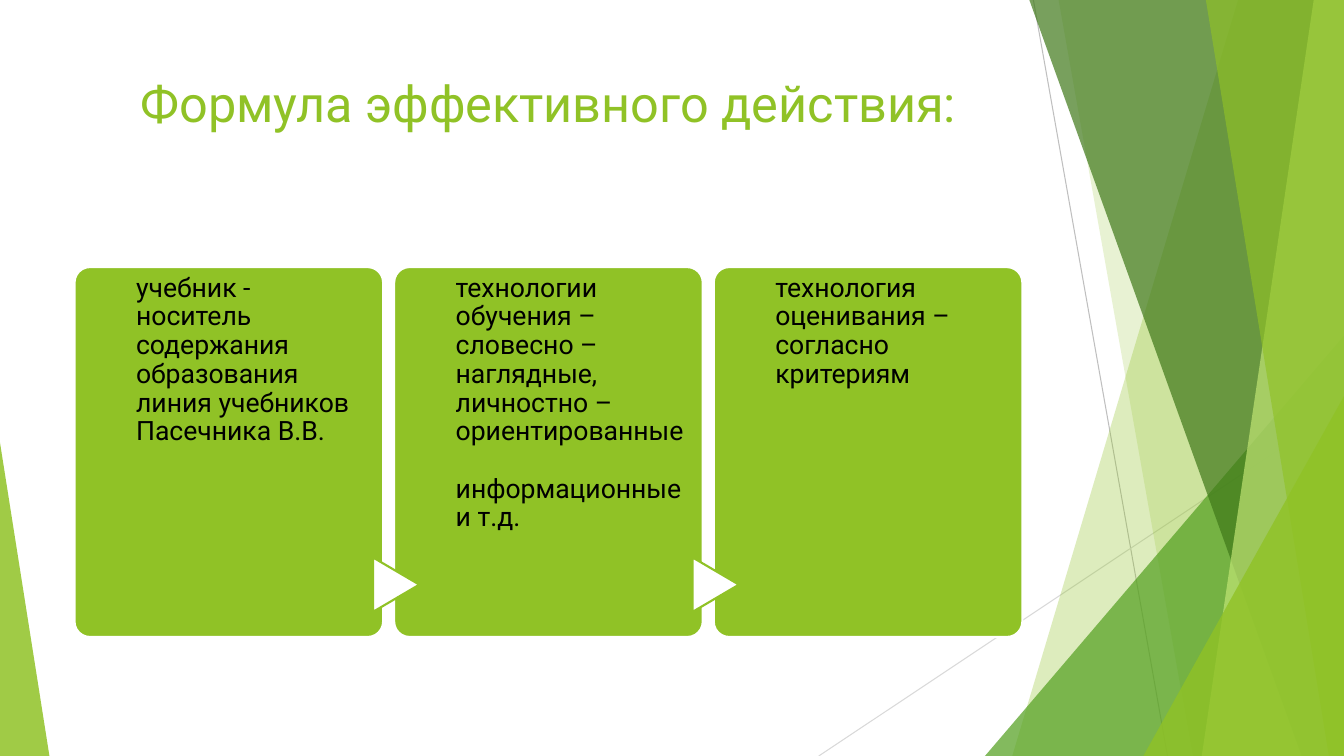
"""Build a slide with three linked cards beside a fan of green bands."""
from typing import NamedTuple

from lxml import etree
from pptx import Presentation
from pptx.dml.color import RGBColor
from pptx.enum.shapes import MSO_CONNECTOR, MSO_SHAPE
from pptx.enum.text import MSO_ANCHOR, PP_ALIGN
from pptx.oxml.ns import qn
from pptx.util import Inches, Pt

STRAIGHT = MSO_CONNECTOR.STRAIGHT
PEAK = MSO_SHAPE.ISOSCELES_TRIANGLE
ROUND = MSO_SHAPE.ROUNDED_RECTANGLE
ARROW = MSO_SHAPE.FLOWCHART_EXTRACT
TOP = MSO_ANCHOR.TOP
LEFT, CENTER = PP_ALIGN.LEFT, PP_ALIGN.CENTER
WIDE, HIGH = Inches(13.33), Inches(7.5)
GREEN, WHITE, BLACK = "90C226", "FFFFFF", "000000"


class Box(NamedTuple):
    """Hold a frame in percent of the slide."""
    left: float
    top: float
    wide: float
    high: float


class Ray(NamedTuple):
    """Hold a thin line in percent of the slide."""
    start: tuple[float, float]
    end: tuple[float, float]
    hue: str


class Band(NamedTuple):
    """Hold a band that runs to the right edge of the slide."""
    top: float
    foot: float
    hue: str
    alpha: int


class Wedge(NamedTuple):
    """Hold a right-angled triangle with its peak at one side."""
    box: Box
    peak: float
    hue: str
    alpha: int


RAYS = [
    Ray((76.89, 0), (86.87, 100), "BFBFBF"),
    Ray((100, 53.73), (60.92, 100), "D9D9D9"),
]
DECOR = [
    Band(92.12, 75.32, GREEN, 30),
    Band(78.77, 88.75, GREEN, 20),
    Wedge(Box(73.29, 44.4, 26.71, 55.6), 1, "54A021", 72),
    Band(76.59, 96.85, "3F7819", 70),
    Band(97.75, 89.42, "C0E474", 70),
    Band(89.72, 98.87, GREEN, 65),
    Wedge(Box(85.07, 52.4, 14.93, 47.6), 1, GREEN, 80),
    Wedge(Box(0, 58.53, 3.68, 41.47), 0, GREEN, 85),
]
TITLE = Box(5.55, 8.93, 70.52, 19.2)
CARD = Box(5.55, 35.33, 22.96, 48.93)
STEP = 23.78
CARDS = [
    ["учебник - носитель содержания образования линия учебников Пасечника В.В."],
    ["технологии обучения – словесно – наглядные, личностно – ориентированные",
     "информационные и т.д."],
    ["технология оценивания – согласно критериям"],
]


def tint(hue: str) -> RGBColor:
    """Turn a hex string into a colour."""
    return RGBColor.from_string(hue)


def across(share: float) -> int:
    """Turn a share of the width into a length."""
    return round(WIDE * share / 100)


def down(share: float) -> int:
    """Turn a share of the height into a length."""
    return round(HIGH * share / 100)


def frame(box: Box) -> tuple[int, int, int, int]:
    """Turn a box into lengths."""
    return across(box.left), down(box.top), across(box.wide), down(box.high)


def paint(shape, hue: str, edge: str = "", alpha: int = 100) -> None:
    """Set the fill, outline and opacity of a shape."""
    shape.shadow.inherit = False
    shape.fill.solid()
    shape.fill.fore_color.rgb = tint(hue)
    if edge:
        shape.line.color.rgb = tint(edge)
        shape.line.width = Pt(1.5)
    else:
        shape.line.fill.background()
    if alpha < 100:
        node = shape.fill._xPr.find(".//" + qn("a:srgbClr"))
        etree.SubElement(node, qn("a:alpha"), val=str(alpha * 1000))


def draw_ray(shapes, ray: Ray) -> None:
    """Draw a thin line."""
    (x, y), (u, v) = ray.start, ray.end
    line = shapes.add_connector(STRAIGHT, across(x), down(y), across(u), down(v))
    line.line.color.rgb = tint(ray.hue)
    line.line.width = Pt(0.75)
    etree.SubElement(line._element.spPr, qn("a:effectLst"))


def draw_band(shapes, band: Band) -> None:
    """Draw a band from the top to the foot of the slide."""
    pen = shapes.build_freeform(across(band.top), 0)
    pen.add_line_segments([(WIDE, 0), (WIDE, HIGH), (across(band.foot), HIGH)])
    paint(pen.convert_to_shape(), band.hue, alpha=band.alpha)


def draw_wedge(shapes, wedge: Wedge) -> None:
    """Draw a right-angled triangle."""
    shape = shapes.add_shape(PEAK, *frame(wedge.box))
    shape.adjustments[0] = wedge.peak
    paint(shape, wedge.hue, alpha=wedge.alpha)


def write(shapes, box: Box, lines: list[str], form: dict, style: dict, para: dict) -> None:
    """Write paragraphs in a text box."""
    text = shapes.add_textbox(*frame(box)).text_frame
    for key, value in form.items():
        setattr(text, key, value)
    text.text = "\n".join(lines)
    for spot, part in enumerate(text.paragraphs):
        for key, value in para.items():
            setattr(part, key, value)
        if spot:
            part.space_before = Pt(20.5)
        font = part.runs[0].font
        for key, value in style.items():
            setattr(font, key, value)
        font.color.rgb = tint(BLACK if form.get("margin_left") == 0 else GREEN)


def draw_card(shapes, spot: int, lines: list[str]) -> None:
    """Draw a card, the arrow leading to it and its text."""
    left = CARD.left + STEP * spot
    card = shapes.add_shape(ROUND, *frame(CARD._replace(left=left)))
    card.adjustments[0] = 0.05
    paint(card, GREEN, WHITE)
    if spot:
        arrow = shapes.add_shape(ARROW, *frame(Box(left - 1.88, 74.27, 4.05, 6.13)))
        arrow.rotation = 90
        paint(arrow, WHITE, GREEN)
    form = {"word_wrap": True, "vertical_anchor": TOP, "margin_left": 0,
            "margin_top": Inches(0.07), "margin_right": 0, "margin_bottom": 0}
    write(shapes, Box(left + 4.58, CARD.top, 17.1, CARD.high), lines, form,
          {"name": "Roboto", "size": Pt(19)}, {"alignment": LEFT, "line_spacing": 0.9})


def main() -> None:
    """Build and save the slide."""
    deck = Presentation()
    deck.slide_width, deck.slide_height = WIDE, HIGH
    shapes = deck.slides.add_slide(deck.slide_layouts[6]).shapes
    for ray in RAYS:
        draw_ray(shapes, ray)
    for item in DECOR:
        if isinstance(item, Band):
            draw_band(shapes, item)
        else:
            draw_wedge(shapes, item)
    write(shapes, TITLE, ["Формула эффективного действия:"],
          {"word_wrap": True, "vertical_anchor": TOP},
          {"name": "Roboto", "size": Pt(36)}, {"alignment": CENTER})
    for spot, lines in enumerate(CARDS):
        draw_card(shapes, spot, lines)
    deck.save("out.pptx")


if __name__ == "__main__":
    main()
